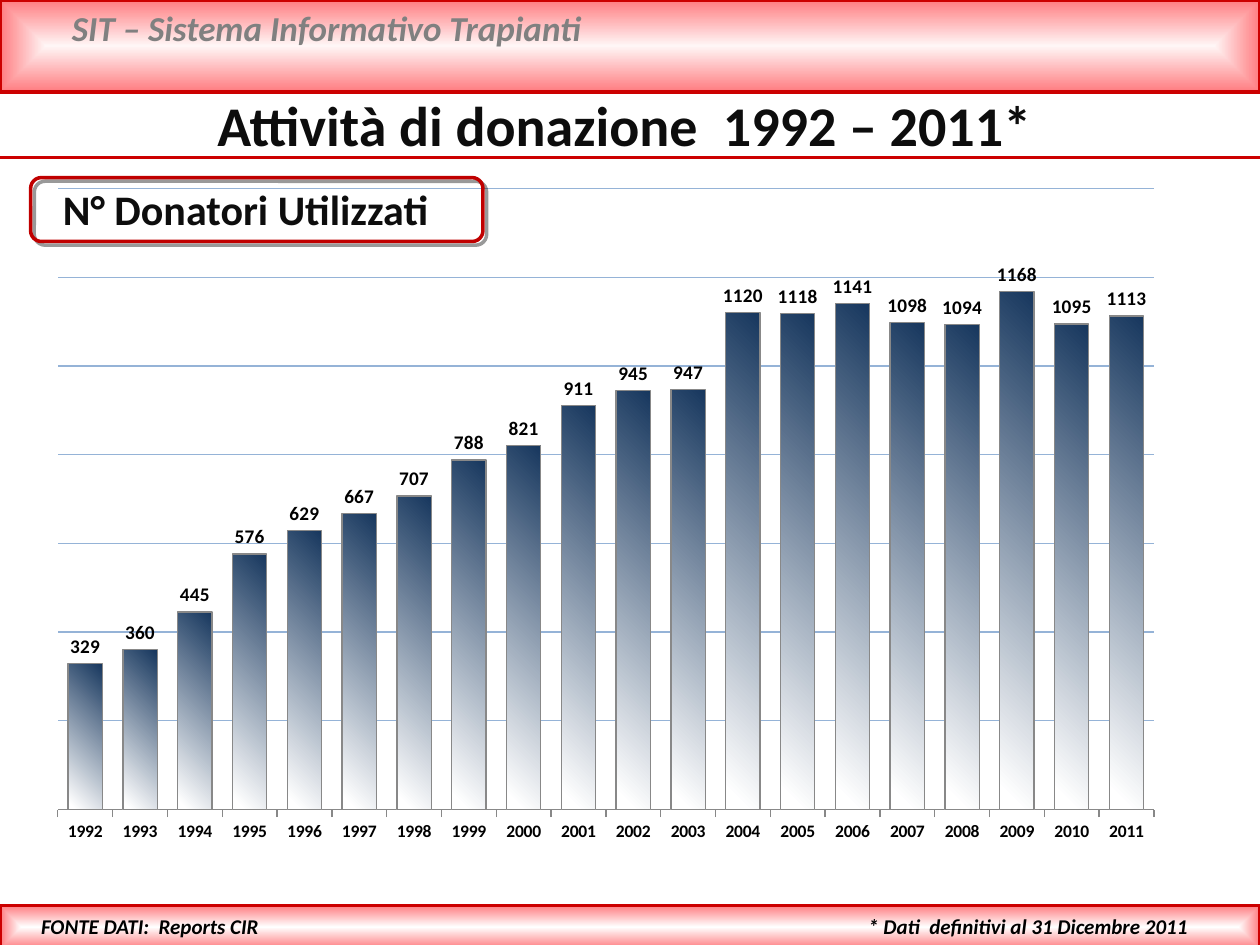
from lxml import etree
from pptx import Presentation
from pptx import util as u
from pptx.chart.data import CategoryChartData
from pptx.dml.color import RGBColor
from pptx.enum import chart as ch, shapes, text
from pptx.oxml import parse_xml
from pptx.oxml.ns import nsdecls, qn

Pt = u.Pt

# Content
SYSTEM = "SIT – Sistema Informativo Trapianti"
TITLE = "Attività di donazione  1992 – 2011*"
MEASURE = "N° Donatori Utilizzati"
SOURCE = "FONTE DATI:  Reports CIR"
NOTE = "* Dati  definitivi al 31 Dicembre 2011"
FIRST_YEAR = 1992
DONORS = [329, 360, 445, 576, 629, 667, 707, 788, 821, 911,
          945, 947, 1120, 1118, 1141, 1098, 1094, 1168, 1095, 1113]

THEME = {
    "font": "Calibri",
    "size": {"system": 20, "title": 32, "measure": 24, "footer": 12, "axis": 10, "value": 11},
    "color": {"system": "808080", "ink": "0D0D0D", "black": "000000", "white": "FFFFFF",
              "rule": "CC0000", "frame": "C00000", "blush": "FFF6F6", "pink": "FF7C80",
              "bar": "17375E", "axis": "888888", "grid": "95B3D7"},
}
SIZE, COLOR = THEME["size"], THEME["color"]

# Places in points: left, top, width, height
WIDTH, HEIGHT = 720, 540
HEADER_BAND = (0, 0, WIDTH, 52.5)
FOOTER_BAND = (0, 517.5, WIDTH, 24.5)
RULE_Y = 90
SYSTEM_BOX = (34, 0, 646.5, 31.5)
TITLE_BOX = (0, 48, 714, 46)
CHART_BOX = (20, 100, 652.5, 390)
MEASURE_BOX = (18, 101.5, 263, 36.5)
FRAME_BOX = (17.5, 101.5, 258.5, 36.5)
SOURCE_BOX = (14.5, 518.5, 140.5, 21.5)
NOTE_BOX = (489, 518.5, 231, 21.5)
PLOT_SHARE = {"x": 0.02, "y": 0.02, "w": 0.96, "h": 0.91}


def pts(box):
    return [Pt(v) for v in box]


def rgb(name):
    return RGBColor.from_string(COLOR[name])


def set_all(target, values):
    for name, value in values.items():
        setattr(target, name, value)


def set_font(font, size, color, bold=True, italic=False):
    set_all(font, {"name": THEME["font"], "size": Pt(SIZE[size]), "bold": bold, "italic": italic})
    font.color.rgb = rgb(color)


def set_line(line, color, width):
    line.color.rgb = rgb(color)
    line.width = Pt(width)


def set_gradient(fill, properties, stops, direction):
    """Swap the solid fill for a gradient of (percent, colour) stops."""
    fill.solid()
    solid = properties.find(qn("a:solidFill"))
    steps = "".join(f'<a:gs pos="{at * 1000}"><a:srgbClr val="{COLOR[name]}"/></a:gs>'
                    for at, name in stops)
    properties.replace(solid, parse_xml(
        f'<a:gradFill {nsdecls("a")} rotWithShape="1"><a:gsLst>{steps}</a:gsLst>'
        f'{direction}</a:gradFill>'))


def write(shape, words, size, color, italic=False, align=text.PP_ALIGN.LEFT,
          wrap=True, left=7.2):
    frame = shape.text_frame
    set_all(frame, {"word_wrap": wrap, "auto_size": text.MSO_AUTO_SIZE.NONE,
                    "vertical_anchor": text.MSO_ANCHOR.TOP, "margin_left": Pt(left),
                    "margin_right": Pt(7.2), "margin_top": Pt(3.6), "margin_bottom": Pt(3.6)})
    line = frame.paragraphs[0]
    line.alignment = align
    run = line.add_run()
    run.text = words
    set_font(run.font, size, color, italic=italic)


def add_text(slide, box, *args, **kwargs):
    write(slide.shapes.add_textbox(*pts(box)), *args, **kwargs)


def add_band(slide, box, center):
    band = slide.shapes.add_shape(shapes.MSO_SHAPE.RECTANGLE, *pts(box))
    band.shadow.inherit = False
    middle = '<a:path path="shape"><a:fillToRect l="50000" t="50000" r="50000" b="50000"/></a:path>'
    set_gradient(band.fill, band._element.spPr, [(0, center), (100, "pink")], middle)
    set_line(band.line, "rule", 2)


def add_rule(slide, y):
    rule = slide.shapes.add_connector(shapes.MSO_CONNECTOR.STRAIGHT, *pts((0, y, WIDTH, y)))
    set_line(rule.line, "rule", 2)
    etree.SubElement(rule._element.spPr, qn("a:effectLst"))


def add_frame(slide, box):
    frame = slide.shapes.add_shape(shapes.MSO_SHAPE.ROUNDED_RECTANGLE, *pts(box))
    frame.adjustments[0] = 0.17
    frame.fill.background()
    set_line(frame.line, "frame", 2)
    frame.shadow.inherit = False
    effects = frame._element.spPr.find(qn("a:effectLst"))
    effects.append(parse_xml(
        f'<a:outerShdw {nsdecls("a")} dist="{Pt(3)}" dir="2700000" algn="tl" rotWithShape="0">'
        f'<a:srgbClr val="{COLOR["black"]}"><a:alpha val="40000"/></a:srgbClr></a:outerShdw>'))


def add_donor_chart(slide):
    data = CategoryChartData()
    data.categories = [str(FIRST_YEAR + i) for i in range(len(DONORS))]
    data.add_series("Series 1", DONORS)
    chart = slide.shapes.add_chart(ch.XL_CHART_TYPE.COLUMN_CLUSTERED,
                                   *pts(CHART_BOX), data).chart
    set_all(chart, {"has_legend": False, "has_title": False})
    set_font(chart.font, "axis", "black", bold=False)

    # Axes
    years, scale = chart.category_axis, chart.value_axis
    set_all(years, {"major_tick_mark": ch.XL_TICK_MARK.OUTSIDE, "has_major_gridlines": False})
    set_font(years.tick_labels.font, "axis", "black")
    set_line(years.format.line, "axis", 0.75)
    set_all(scale, {"visible": False, "minimum_scale": 0, "maximum_scale": 1400,
                    "major_unit": 200, "has_major_gridlines": True})
    set_line(scale.major_gridlines.format.line, "grid", 0.75)

    # Columns and their values
    plot = chart.plots[0]
    set_all(plot, {"gap_width": 60, "overlap": -20, "vary_by_categories": False,
                   "has_data_labels": True})
    set_all(plot.data_labels, {"show_value": True,
                               "position": ch.XL_LABEL_POSITION.OUTSIDE_END})
    set_font(plot.data_labels.font, "value", "black")
    donors = plot.series[0]
    donors.invert_if_negative = False
    set_gradient(donors.format.fill, donors._element.get_or_add_spPr(),
                 [(0, "bar"), (96, "white")], '<a:lin ang="8100000" scaled="0"/>')
    set_line(donors.format.line, "axis", 0.75)

    # Fixed inner plot area
    area = chart._chartSpace.chart.plotArea
    for old in area.findall(qn("c:layout")):
        area.remove(old)
    shares = "".join(f'<c:{key} val="{val}"/>' for key, val in PLOT_SHARE.items())
    area.insert(0, parse_xml(
        f'<c:layout {nsdecls("c")}><c:manualLayout><c:layoutTarget val="inner"/>'
        f'<c:xMode val="edge"/><c:yMode val="edge"/>{shares}</c:manualLayout></c:layout>'))


def main():
    deck = Presentation()
    set_all(deck, {"slide_width": Pt(WIDTH), "slide_height": Pt(HEIGHT)})
    slide = deck.slides.add_slide(deck.slide_layouts[5])

    # Bands and rule
    add_band(slide, HEADER_BAND, "blush")
    add_text(slide, SYSTEM_BOX, SYSTEM, "system", "system", italic=True)
    add_band(slide, FOOTER_BAND, "white")
    add_rule(slide, RULE_Y)

    # Title
    title = slide.shapes.title
    set_all(title, dict(zip(("left", "top", "width", "height"), pts(TITLE_BOX))))
    write(title, TITLE, "title", "ink", align=text.PP_ALIGN.CENTER)

    # Chart with its framed heading
    add_donor_chart(slide)
    add_text(slide, MEASURE_BOX, MEASURE, "measure", "ink", left=18)
    add_frame(slide, FRAME_BOX)

    # Footer
    add_text(slide, SOURCE_BOX, SOURCE, "footer", "black", italic=True,
             align=text.PP_ALIGN.RIGHT, wrap=False)
    add_text(slide, NOTE_BOX, NOTE, "footer", "black", italic=True)

    deck.save("out.pptx")


if __name__ == "__main__":
    main()
